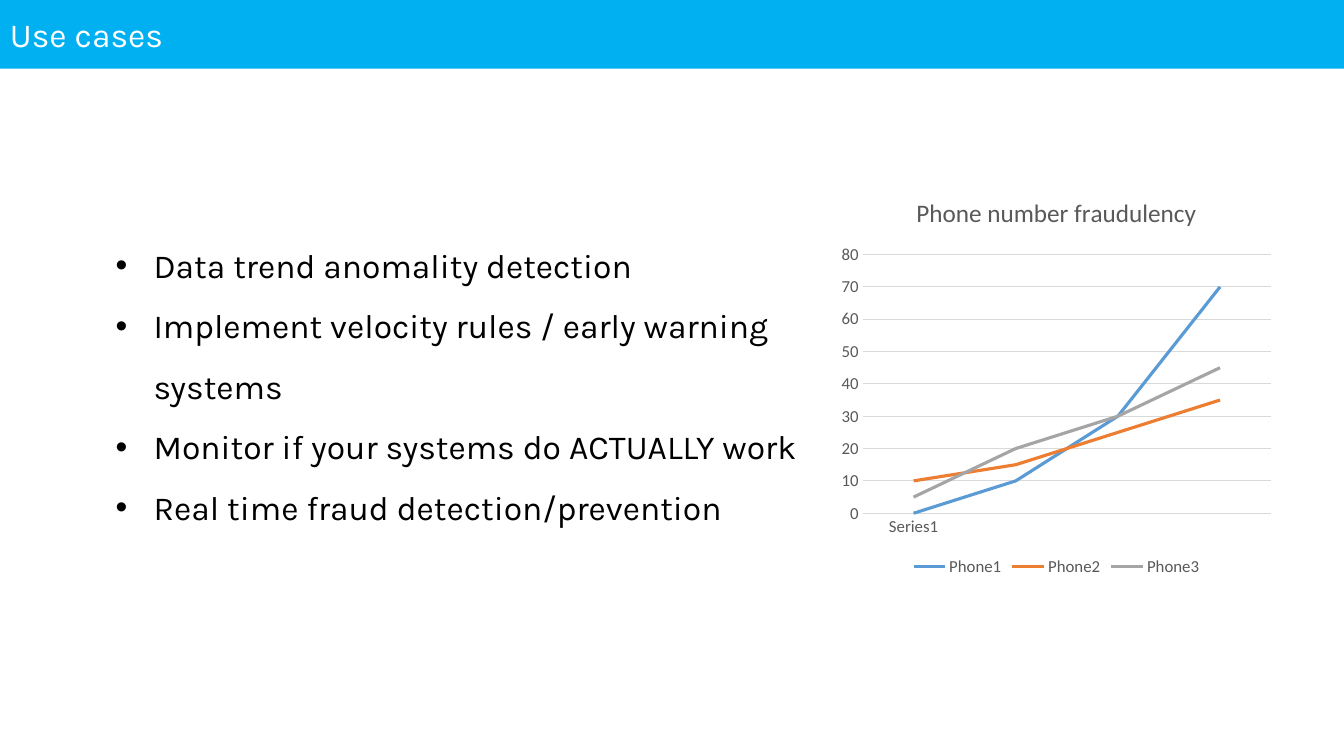
from lxml import etree
from pptx import Presentation
from pptx.chart.data import CategoryChartData
from pptx.dml.color import RGBColor
from pptx.enum.chart import XL_CHART_TYPE, XL_LEGEND_POSITION, XL_MARKER_STYLE, XL_TICK_MARK
from pptx.enum.text import MSO_ANCHOR, PP_ALIGN
from pptx.oxml.ns import qn
from pptx.util import Pt

LINE_CHART = XL_CHART_TYPE.LINE
LEGEND_BOTTOM = XL_LEGEND_POSITION.BOTTOM
NO_MARKER = XL_MARKER_STYLE.NONE
NO_TICK = XL_TICK_MARK.NONE
MIDDLE = MSO_ANCHOR.MIDDLE
LEFT = PP_ALIGN.LEFT

COLORS = {
    "banner": "00B0F0",
    "white": "FFFFFF",
    "black": "000000",
    "label": "595959",
    "grid": "D9D9D9",
    "Phone1": "5B9BD5",
    "Phone2": "ED7D31",
    "Phone3": "A5A5A5",
}
USE_CASES = [
    "Data trend anomality detection",
    "Implement velocity rules / early warning systems",
    "Monitor if your systems do ACTUALLY work",
    "Real time fraud detection/prevention",
]
FRAUD_SCORES = {
    "Phone1": (0, 10, 30, 70),
    "Phone2": (10, 15, 25, 35),
    "Phone3": (5, 20, 30, 45),
}


class SlideBuilder:
    """Draws styled elements on the current slide."""

    text_font = "Karla"
    chart_font = "Calibri"
    text_size = 24

    def __init__(self, slide):
        self.slide = slide

    def color(self, name):
        return RGBColor.from_string(COLORS[name])

    def format(self, target, **values):
        for name, value in values.items():
            setattr(target, name, value)

    def style_font(self, font, name, size, color):
        self.format(font, name=name, size=Pt(size), bold=False)
        font.color.rgb = self.color(color)

    def style_line(self, line, color, width):
        line.color.rgb = self.color(color)
        line.width = Pt(width)

    def banner(self, text, *box):
        shape = self.slide.shapes.add_shape(1, *map(Pt, box))
        shape.shadow.inherit = False
        shape.fill.solid()
        shape.fill.fore_color.rgb = self.color("banner")
        shape.line.fill.background()
        shape.text_frame.vertical_anchor = MIDDLE
        paragraph = shape.text_frame.paragraphs[0]
        self.format(paragraph, text=text, alignment=LEFT)
        self.style_font(paragraph.font, self.text_font, self.text_size, "white")

    def bullets(self, items, *box):
        frame = self.slide.shapes.add_textbox(*map(Pt, box)).text_frame
        frame.word_wrap = True
        for index, item in enumerate(items):
            paragraph = frame.add_paragraph() if index else frame.paragraphs[0]
            self.format(paragraph, text=item, line_spacing=1.5)
            properties = paragraph._p.get_or_add_pPr()
            properties.set("marL", str(Pt(27)))
            properties.set("indent", str(-Pt(27)))
            etree.SubElement(properties, qn("a:buFont")).set("typeface", "Arial")
            etree.SubElement(properties, qn("a:buChar")).set("char", "•")
            self.style_font(paragraph.font, self.text_font, self.text_size, "black")

    def line_chart(self, title, categories, series_values, *box):
        data = CategoryChartData()
        data.categories = categories
        for name, values in series_values.items():
            data.add_series(name, values)
        chart = self.slide.shapes.add_chart(LINE_CHART, *map(Pt, box), data).chart
        self.style_font(chart.font, self.chart_font, 12, "label")

        chart.has_title = True
        paragraph = chart.chart_title.text_frame.paragraphs[0]
        paragraph.text = title
        self.style_font(paragraph.runs[0].font, self.chart_font, 18, "label")
        chart.chart_title.include_in_layout = False

        chart.has_legend = True
        self.format(chart.legend, position=LEGEND_BOTTOM, include_in_layout=False)
        for part in (chart.legend, chart.category_axis.tick_labels, chart.value_axis.tick_labels):
            self.style_font(part.font, self.chart_font, 12, "label")

        for axis in (chart.category_axis, chart.value_axis):
            self.format(axis, major_tick_mark=NO_TICK, minor_tick_mark=NO_TICK)
        self.style_line(chart.category_axis.format.line, "grid", 0.75)
        chart.value_axis.format.line.fill.background()
        self.format(chart.value_axis, minimum_scale=0, maximum_scale=80, major_unit=10)
        self.style_line(chart.value_axis.major_gridlines.format.line, "grid", 0.75)

        chart.plots[0].vary_by_categories = False
        for series in chart.plots[0].series:
            series.smooth = False
            series.marker.style = NO_MARKER
            self.style_line(series.format.line, series.name, 2.25)


def main():
    presentation = Presentation()
    presentation.slide_width = Pt(960)
    presentation.slide_height = Pt(540)
    slide = presentation.slides.add_slide(presentation.slide_layouts[6])
    builder = SlideBuilder(slide)
    builder.banner("Use cases", 0, 0, 960, 49)
    builder.bullets(USE_CASES, 75.6, 157, 530.6, 269)
    builder.line_chart("Phone number fraudulency", ["Series1", "", "", ""], FRAUD_SCORES,
                       594.7, 126.7, 319.7, 288)
    presentation.save("out.pptx")


if __name__ == "__main__":
    main()
